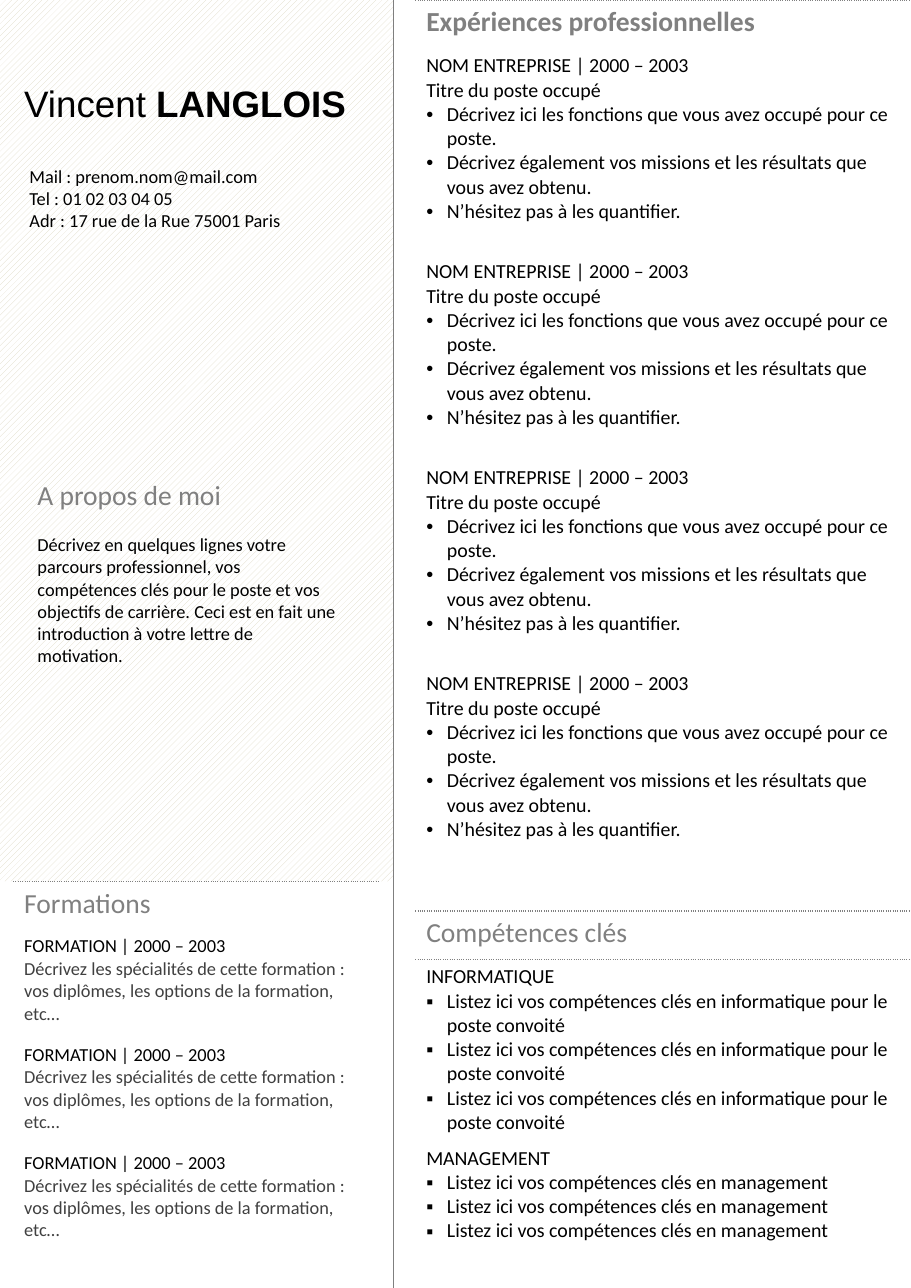
from lxml.etree import SubElement
from pptx import Presentation
from pptx.dml.color import RGBColor
from pptx.enum.dml import MSO_PATTERN
from pptx.enum.shapes import MSO_CONNECTOR, MSO_SHAPE
from pptx.enum.text import MSO_ANCHOR, MSO_AUTO_SIZE, PP_ALIGN
from pptx.oxml import parse_xml
from pptx.oxml.ns import nsdecls, qn
from pptx.util import Pt

COLORS = {"text": "000000", "heading": "808080", "detail": "404040",
          "rule": "7F7F7F", "stripe": "DDD9C3", "paper": "FFFFFF"}
PAGE_WIDTH, PAGE_HEIGHT = 595.4, 841.7
SIDEBAR_WIDTH, SIDEBAR_HEIGHT = 257, 576
HEADING_HEIGHT, GAP_HEIGHT = 31.7, 25.2
NO_TABLE_STYLE = "{2D5ABB26-0587-4C30-8999-92F81FD0307C}"

NAME = ("Vincent ", "LANGLOIS")
CONTACT = ["Mail : prenom.nom@mail.com", "Tel : 01 02 03 04 05",
           "Adr : 17 rue de la Rue 75001 Paris"]
ABOUT_HEADING = "A propos de moi"
ABOUT = ("Décrivez en quelques lignes votre parcours professionnel, vos compétences clés "
         "pour le poste et vos objectifs de carrière. Ceci est en fait une introduction "
         "à votre lettre de motivation.")

HEADING = {"size": 18, "color": "heading"}
BODY = {"size": 13}
DOT = {"size": 13, "bullet": "•"}
SQUARE = {"size": 13, "bullet": "▪"}

JOB = [("NOM ENTREPRISE | 2000 – 2003", BODY),
       ("Titre du poste occupé", BODY),
       ("Décrivez ici les fonctions que vous avez occupé pour ce poste.", DOT),
       ("Décrivez également vos missions et les résultats que vous avez obtenu.", DOT),
       ("N’hésitez pas à les quantifier.", DOT)]
COMPUTING = [("INFORMATIQUE", BODY)] + [
    ("Listez ici vos compétences clés en informatique pour le poste convoité", SQUARE)] * 3
MANAGEMENT = [("MANAGEMENT", BODY)] + [
    ("Listez ici vos compétences clés en management", SQUARE)] * 3
COURSE = [("FORMATION | 2000 – 2003", {"size": 12}),
          ("Décrivez les spécialités de cette formation : vos diplômes, "
           "les options de la formation, etc…", {"size": 12, "color": "detail"})]

MAIN_ROWS = [
    (HEADING_HEIGHT, [("Expériences professionnelles", {**HEADING, "bold": True})]),
    *[(134.6, JOB)] * 4,
    (GAP_HEIGHT, []),
    (HEADING_HEIGHT, [("Compétences clés", HEADING)]),
    (118.6, COMPUTING),
    (71.3, MANAGEMENT),
    (GAP_HEIGHT, []),
]
COURSE_ROWS = [(HEADING_HEIGHT, [("Formations", HEADING)]), *[(70.9, COURSE)] * 3]


def rgb(name):
    return RGBColor.from_string(COLORS[name])


def write(paragraph, text, size=12, color="text", bold=False, font="Calibri",
          bullet=None, space_before=0):
    properties = paragraph._p.get_or_add_pPr()
    if bullet:
        properties.set("marL", str(Pt(13.5)))
        properties.set("indent", str(Pt(-13.5)))
        SubElement(properties, qn("a:buFont"), typeface="Arial")
        SubElement(properties, qn("a:buChar"), char=bullet)
    elif bullet == "":
        properties.set("marL", "0")
        properties.set("indent", "0")
        SubElement(properties, qn("a:buNone"))
    paragraph.alignment = PP_ALIGN.LEFT
    paragraph.space_before = Pt(space_before)
    run = paragraph.add_run()
    run.text = text
    run.font.name = font
    run.font.size = Pt(size)
    run.font.bold = bold
    run.font.color.rgb = rgb(color)


def write_lines(text_frame, lines):
    for index, (text, text_format) in enumerate(lines):
        paragraph = text_frame.add_paragraph() if index else text_frame.paragraphs[0]
        write(paragraph, text, **text_format)


def place(shape, left, top, width, height):
    shape.left, shape.top, shape.width, shape.height = map(Pt, (left, top, width, height))
    text_frame = shape.text_frame
    text_frame.word_wrap = True
    text_frame.auto_size = MSO_AUTO_SIZE.NONE
    text_frame.vertical_anchor = MSO_ANCHOR.TOP
    return text_frame


def add_top_border(cell):
    border = parse_xml(
        f'<a:lnT {nsdecls("a")} w="{Pt(1)}"><a:solidFill><a:srgbClr val="{COLORS["heading"]}"/>'
        '</a:solidFill><a:prstDash val="sysDot"/></a:lnT>')
    cell._tc.get_or_add_tcPr().insert(0, border)


def add_section_table(slide, rows, left, top, width, fill=None):
    height = sum(row_height for row_height, lines in rows)
    frame = slide.shapes.add_table(len(rows), 1, Pt(left), Pt(top), Pt(width), Pt(height))
    table = frame.table
    table.first_row = table.horz_banding = False
    for style in frame.element.iter(qn("a:tableStyleId")):
        style.text = NO_TABLE_STYLE
    for index, (row_height, lines) in enumerate(rows):
        table.rows[index].height = Pt(row_height)
        cell = table.cell(index, 0)
        if fill:
            cell.fill.solid()
            cell.fill.fore_color.rgb = rgb(fill)
        else:
            cell.fill.background()
        if not lines:
            cell.margin_top = cell.margin_bottom = 0
        elif row_height == HEADING_HEIGHT:
            add_top_border(cell)
        write_lines(cell.text_frame, lines)


def main():
    presentation = Presentation()
    presentation.slide_width, presentation.slide_height = Pt(PAGE_WIDTH), Pt(PAGE_HEIGHT)
    slide = presentation.slides.add_slide(presentation.slide_layouts[1])
    title, body = slide.shapes.title, slide.placeholders[1]

    sidebar = slide.shapes.add_shape(
        MSO_SHAPE.RECTANGLE, 0, 0, Pt(SIDEBAR_WIDTH), Pt(SIDEBAR_HEIGHT))
    sidebar.shadow.inherit = False
    sidebar.line.fill.background()
    sidebar.fill.patterned()
    sidebar.fill.pattern = MSO_PATTERN.WIDE_UPWARD_DIAGONAL
    sidebar.fill.fore_color.rgb = rgb("stripe")
    sidebar.fill.back_color.rgb = rgb("paper")
    slide.shapes._spTree.insert(2, sidebar.element)

    divider = slide.shapes.add_connector(
        MSO_CONNECTOR.STRAIGHT, Pt(SIDEBAR_WIDTH), 0, Pt(SIDEBAR_WIDTH), Pt(PAGE_HEIGHT))
    divider.line.color.rgb = rgb("rule")
    divider.line.width = Pt(0.5)
    SubElement(divider.element.spPr, qn("a:effectLst"))

    name_frame = place(title, 8.6, 49, 226.8, 36)
    name_frame.word_wrap = False
    for part, bold in zip(NAME, (False, True)):
        write(name_frame.paragraphs[0], part, size=24, font="Arial", bold=bold)

    contact = slide.shapes.add_textbox(0, 0, 0, 0)
    write_lines(place(contact, 12.2, 104.4, 223.2, 51.1), [(line, {}) for line in CONTACT])

    write_lines(place(body, 17.3, 308.9, 212.4, 131), [
        (ABOUT_HEADING, {**HEADING, "bullet": ""}),
        (ABOUT, {"bullet": "", "space_before": 14.6})])

    add_section_table(slide, MAIN_ROWS, 271.4, 0, 324, fill="paper")
    add_section_table(slide, COURSE_ROWS, 8.6, SIDEBAR_HEIGHT, 239)
    presentation.save("out.pptx")


if __name__ == "__main__":
    main()
